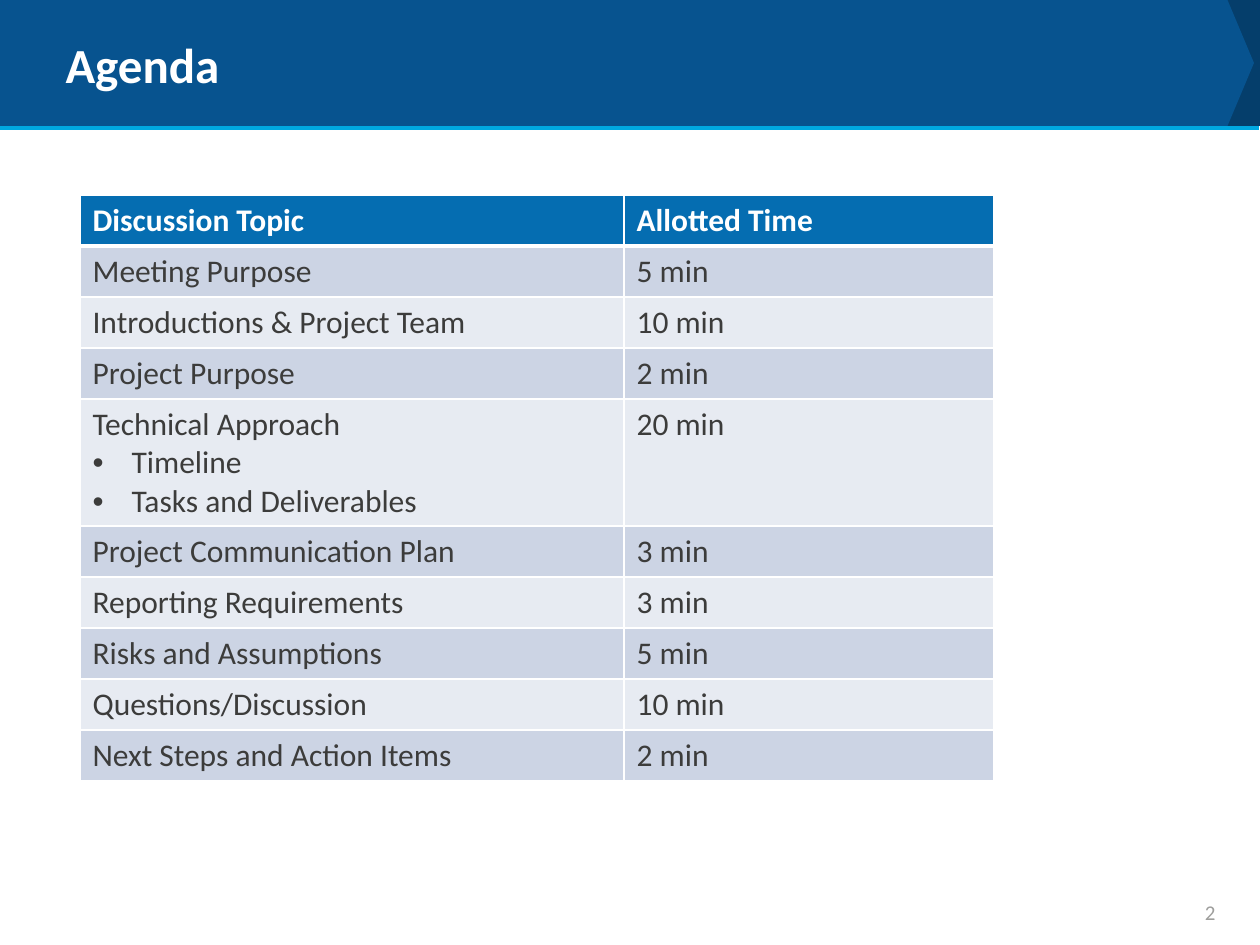
from lxml import etree
from pptx import Presentation
from pptx.dml.color import RGBColor
from pptx.enum.shapes import MSO_CONNECTOR, MSO_SHAPE
from pptx.enum.text import MSO_ANCHOR, PP_ALIGN
from pptx.oxml.ns import qn
from pptx.util import Inches, Pt

PENTAGON = MSO_SHAPE.PENTAGON
STRAIGHT = MSO_CONNECTOR.STRAIGHT
MIDDLE = MSO_ANCHOR.MIDDLE
LEFT, RIGHT = PP_ALIGN.LEFT, PP_ALIGN.RIGHT

TITLE_ONLY = 5
PX_PER_INCH = 126
ROW_HEIGHT = 51
BULLET_LINE = 38

HEADER = ("Discussion Topic", "Allotted Time")
AGENDA = [
    ("Meeting Purpose", "5 min"),
    ("Introductions & Project Team", "10 min"),
    ("Project Purpose", "2 min"),
    ("Technical Approach\nTimeline\nTasks and Deliverables", "20 min"),
    ("Project Communication Plan", "3 min"),
    ("Reporting Requirements", "3 min"),
    ("Risks and Assumptions", "5 min"),
    ("Questions/Discussion", "10 min"),
    ("Next Steps and Action Items", "2 min"),
]


def px(length):
    return round(length * Inches(1) / PX_PER_INCH)


def color(hex_string):
    return RGBColor.from_string(hex_string)


def write_text(frame, text, size=18, fill="3C3C3B", bold=False, align=LEFT,
               font="Calibri"):
    """Write one paragraph per line; lines after the first are bulleted."""
    for index, line in enumerate(text.split("\n")):
        paragraph = frame.paragraphs[0] if index == 0 else frame.add_paragraph()
        if index:
            properties = paragraph._p.get_or_add_pPr()
            properties.set("marL", str(px(39)))
            properties.set("indent", str(-px(39)))
            etree.SubElement(properties, qn("a:buFont"), typeface="Arial")
            etree.SubElement(properties, qn("a:buChar"), char="•")
        paragraph.alignment = align
        run = paragraph.add_run()
        run.text = line
        run.font.name = font
        run.font.size = Pt(size)
        run.font.bold = bold
        run.font.color.rgb = color(fill)


def set_borders(cell, top=1, bottom=1, line="FFFFFF"):
    properties = cell._tc.get_or_add_tcPr()
    for side, width in (("L", 1), ("R", 1), ("T", top), ("B", bottom)):
        border = etree.SubElement(properties, qn(f"a:ln{side}"), w=str(Pt(width)))
        fill = etree.SubElement(border, qn("a:solidFill"))
        etree.SubElement(fill, qn("a:srgbClr"), val=line)


class AgendaSlide:
    header_fill = "056DB1"
    row_fills = ("CCD4E4", "E7EBF2")

    def __init__(self, presentation):
        layout = presentation.slide_layouts[TITLE_ONLY]
        self.slide = presentation.slides.add_slide(layout)
        self.shapes = self.slide.shapes

    def band(self, left, top, width, height, fill, point):
        shape = self.shapes.add_shape(
            PENTAGON, px(left), px(top), px(width), px(height))
        shape.adjustments[0] = point
        shape.shadow.inherit = False
        shape.fill.solid()
        shape.fill.fore_color.rgb = color(fill)
        shape.line.fill.background()

    def rule(self, left, top, right, line, width):
        connector = self.shapes.add_connector(
            STRAIGHT, px(left), px(top), px(right), px(top))
        connector.line.color.rgb = color(line)
        connector.line.width = Pt(width)
        etree.SubElement(connector._element.spPr, qn("a:effectLst"))

    def title(self, left, top, width, height, text):
        title = self.shapes.title
        title.left, title.top = px(left), px(top)
        title.width, title.height = px(width), px(height)
        title.text_frame.vertical_anchor = MIDDLE
        write_text(title.text_frame, text, size=28, fill="FFFFFF", bold=True)
        # Bring the placeholder in front of the bands
        title.element.getparent().append(title.element)

    def text_box(self, left, top, width, height, text, **text_format):
        box = self.shapes.add_textbox(px(left), px(top), px(width), px(height))
        box.text_frame.word_wrap = True
        box.text_frame.vertical_anchor = MIDDLE
        write_text(box.text_frame, text, **text_format)

    def table(self, left, top, column_widths, rows):
        heights = [ROW_HEIGHT + BULLET_LINE * row[0].count("\n") for row in rows]
        table = self.shapes.add_table(
            len(rows), len(column_widths), px(left), px(top),
            px(sum(column_widths)), px(sum(heights))).table
        for column, width in zip(table.columns, column_widths):
            column.width = px(width)
        for index, (texts, height) in enumerate(zip(rows, heights)):
            table.rows[index].height = px(height)
            is_header = index == 0
            fill = self.header_fill if is_header else self.row_fills[(index - 1) % 2]
            for column, text in enumerate(texts):
                cell = table.cell(index, column)
                set_borders(cell, top=3 if index == 1 else 1,
                            bottom=3 if is_header else 1)
                cell.fill.solid()
                cell.fill.fore_color.rgb = color(fill)
                write_text(cell.text_frame, text, bold=is_header,
                           fill="FFFFFF" if is_header else "3C3C3B")


def main():
    presentation = Presentation()
    presentation.slide_width = px(1260)
    presentation.slide_height = px(945)

    agenda = AgendaSlide(presentation)
    agenda.band(1203, 0, 57, 126, "053E6B", point=0)
    agenda.band(0, 0, 1254, 126, "07538F", point=0.21)
    agenda.rule(0, 128, 1259, "00A8E1", 2.25)
    agenda.title(53, 10, 1155, 107, "Agenda")
    agenda.text_box(935, 896, 293, 32, "2", size=12, fill="9E9E9C", align=RIGHT)
    agenda.table(80, 195, (544, 370), [HEADER, *AGENDA])

    presentation.save("out.pptx")


if __name__ == "__main__":
    main()
